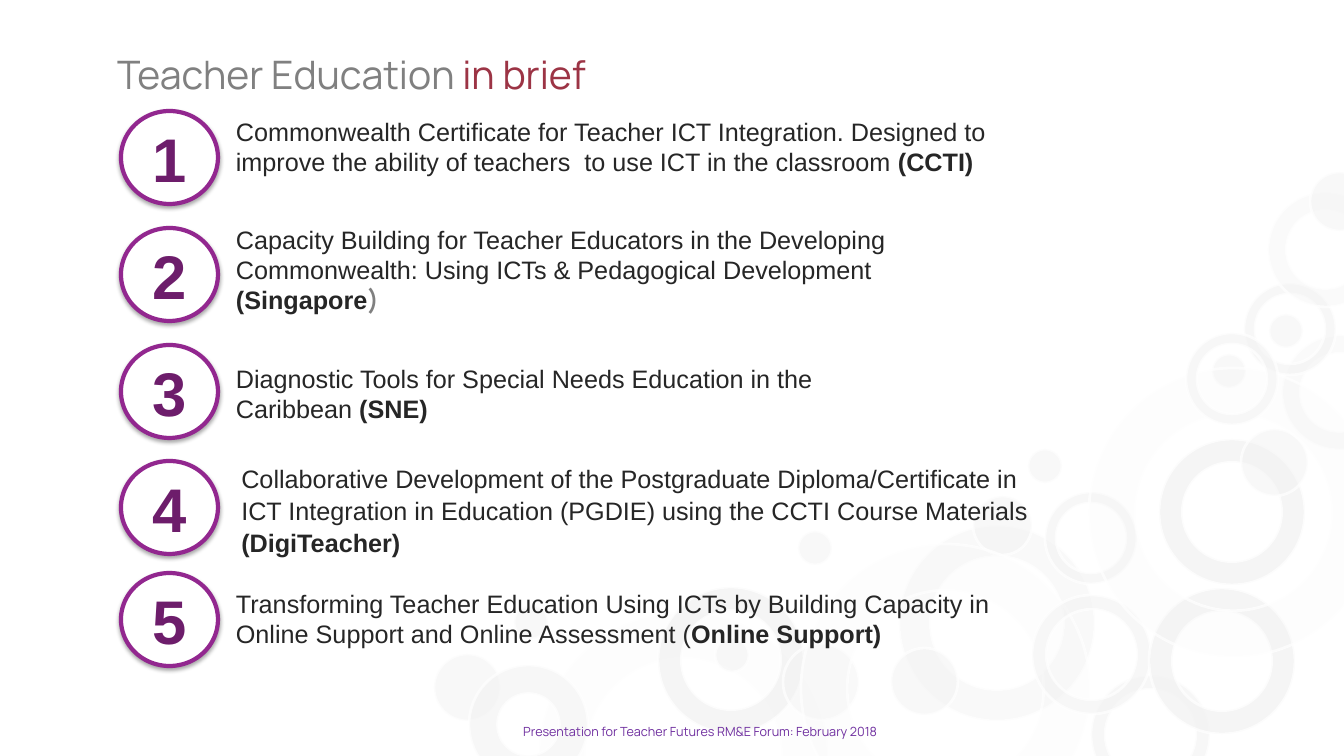
"""Build the Teacher Education overview slide with five numbered programmes."""
from lxml.etree import SubElement
from pptx import Presentation
from pptx.dml.color import RGBColor
from pptx.enum.shapes import MSO_SHAPE as Shape
from pptx.enum.text import MSO_ANCHOR as Anchor, MSO_AUTO_SIZE as AutoSize, PP_ALIGN as Align
from pptx.oxml.ns import qn
from pptx.util import Pt

PX = 914400 / 100.8
SLIDE_SIZE = (1344, 756)
COLORS = {
    "white": "FFFFFF", "bubble": "F2F2F2", "ring": "92278F", "number": "6D1D6B",
    "text": "262626", "gray": "808080", "accent": "9C3445", "footer": "7030A0",
    "shadow": "000000",
}

TITLE = [("Teacher Education ", "gray"), ("in brief", "accent")]
TITLE_BOX = (107, 45, 738, 57)
FOOTER = "Presentation for Teacher Futures RM&E Forum: February 2018"
FOOTER_BOX = (364, 719, 672, 25)

BADGE_LEFT, BADGE_WIDTH, BADGE_HEIGHT = 121, 97, 93
INDENTED_ITEM = 4
ITEMS = [
    (111, (226, 111, 773, 72),
     "Commonwealth Certificate for Teacher ICT Integration. Designed to improve "
     "the ability of teachers  to use ICT in the classroom ", "(CCTI)", ""),
    (228, (226, 219, 672, 102),
     "Capacity Building for Teacher Educators in the Developing Commonwealth: "
     "Using ICTs & Pedagogical Development ", "(Singapore", ")"),
    (345, (226, 358, 672, 72),
     "Diagnostic Tools for Special Needs Education in the Caribbean ", "(SNE)", ""),
    (461, (181, 456, 892, 108),
     "Collaborative Development of the Postgraduate Diploma/Certificate in ICT "
     "Integration in Education (PGDIE) using the CCTI Course Materials ",
     "(DigiTeacher)", ""),
    (573, (226, 583, 830, 72),
     "Transforming Teacher Education Using ICTs by Building Capacity in Online "
     "Support and Online Assessment (", "Online Support)", ""),
]

# kind: (diameter, ring thickness or None for a disc, opacity percent)
BUBBLE_KINDS = {
    "huge": (289, 0.16, 13), "wide": (196, 0.16, 42), "bold": (146, 0.16, 75),
    "pale": (115, 0.16, 31), "thin": (119, 0.12, 54), "thick": (119, 0.24, 54),
    "small": (92, 0.12, 54), "disc": (67, None, 47), "big disc": (76, None, 39),
    "mid disc": (59, None, 47), "dot": (34, None, 47),
}
BUBBLES = [
    ("bold", 1159, 439), ("pale", 1282, 335), ("huge", 539, 612),
    ("thin", 1091, 675), ("small", 1244, 283), ("disc", 1241, 429),
    ("dot", 1212, 354), ("wide", 899, 525), ("bold", 658, 587),
    ("big disc", 783, 644), ("mid disc", 973, 496), ("huge", 801, 544),
    ("thin", 1032, 595), ("small", 1045, 492), ("dot", 798, 531),
    ("disc", 434, 654), ("dot", 715, 638), ("dot", 1028, 449),
    ("bold", 1149, 588), ("pale", 1268, 192), ("mid disc", 1310, 172),
    ("huge", 1089, 368), ("small", 1186, 333), ("thick", 469, 665),
    ("dot", 1269, 314), ("disc", 891, 648), ("dot", 514, 605),
]


def emu(*lengths):
    return [round(length * PX) for length in lengths]


def rgb(name):
    return RGBColor.from_string(COLORS[name])


def add_run(paragraph, text, size, color, font="Arial", bold=False):
    run = paragraph.add_run()
    run.text = text
    run.font.size = Pt(size)
    run.font.name = font
    run.font.bold = bold
    run.font.color.rgb = rgb(color)


def add_text_box(slide, box):
    frame = slide.shapes.add_textbox(*emu(*box)).text_frame
    frame.word_wrap = True
    frame.auto_size = AutoSize.SHAPE_TO_FIT_TEXT
    return frame.paragraphs[0]


def add_round(slide, kind, box, fill, line, line_width):
    shape = slide.shapes.add_shape(kind, *emu(*box))
    shape.shadow.inherit = False
    shape.fill.solid()
    shape.fill.fore_color.rgb = rgb(fill)
    shape.line.color.rgb = rgb(line)
    shape.line.width = Pt(line_width)
    return shape


def set_alpha(parent, percent):
    SubElement(parent, qn("a:alpha"), val=str(percent * 1000))


def add_bubble(slide, kind, left, top):
    diameter, thickness, opacity = BUBBLE_KINDS[kind]
    preset = Shape.DONUT if thickness else Shape.OVAL
    bubble = add_round(slide, preset, (left, top, diameter, diameter), "bubble", "white", 2)
    if thickness:
        bubble.adjustments[0] = thickness
    fill_color, line_color = bubble.element.spPr.iter(qn("a:srgbClr"))
    set_alpha(fill_color, opacity)
    set_alpha(line_color, 70)


def add_badge(slide, number, top):
    box = (BADGE_LEFT, top, BADGE_WIDTH, BADGE_HEIGHT)
    badge = add_round(slide, Shape.OVAL, box, "white", "ring", 3)
    effects = badge.element.spPr.find(qn("a:effectLst"))
    shadow = SubElement(effects, qn("a:outerShdw"), blurRad=str(Pt(3.1)),
                        dist=str(Pt(1.8)), dir="5400000", rotWithShape="0")
    set_alpha(SubElement(shadow, qn("a:srgbClr"), val=COLORS["shadow"]), 35)
    badge.text_frame.vertical_anchor = Anchor.MIDDLE
    paragraph = badge.text_frame.paragraphs[0]
    paragraph.alignment = Align.CENTER
    add_run(paragraph, str(number), 44, "number", bold=True)


def add_item(slide, number, item):
    top, box, description, short_name, ending = item
    paragraph = add_text_box(slide, box)
    add_run(paragraph, description, 18, "text")
    add_run(paragraph, short_name, 18, "text", bold=True)
    if ending:
        add_run(paragraph, ending, 18, "gray", "Manrope", bold=True)
    if number == INDENTED_ITEM:
        paragraph.line_spacing = 1.07
        paragraph.space_before = Pt(2)
        properties = paragraph._p.get_or_add_pPr()
        properties.set("marL", "457200")
        properties.set("indent", "0")
    add_badge(slide, number, top)


def add_title(slide):
    title = slide.shapes.title
    title.left, title.top, title.width, title.height = emu(*TITLE_BOX)
    frame = title.text_frame
    frame.vertical_anchor = Anchor.TOP
    frame.word_wrap = True
    frame.auto_size = AutoSize.SHAPE_TO_FIT_TEXT
    frame.paragraphs[0].alignment = Align.LEFT
    for text, color in TITLE:
        add_run(frame.paragraphs[0], text, 28, color, "Manrope")


def main():
    presentation = Presentation()
    presentation.slide_width, presentation.slide_height = emu(*SLIDE_SIZE)
    slide = presentation.slides.add_slide(presentation.slide_layouts[5])
    for bubble in BUBBLES:
        add_bubble(slide, *bubble)
    footer = add_text_box(slide, FOOTER_BOX)
    footer.alignment = Align.CENTER
    add_run(footer, FOOTER, 9, "footer", "Manrope")
    add_title(slide)
    for number, item in enumerate(ITEMS, 1):
        add_item(slide, number, item)
    presentation.save("out.pptx")


if __name__ == "__main__":
    main()
